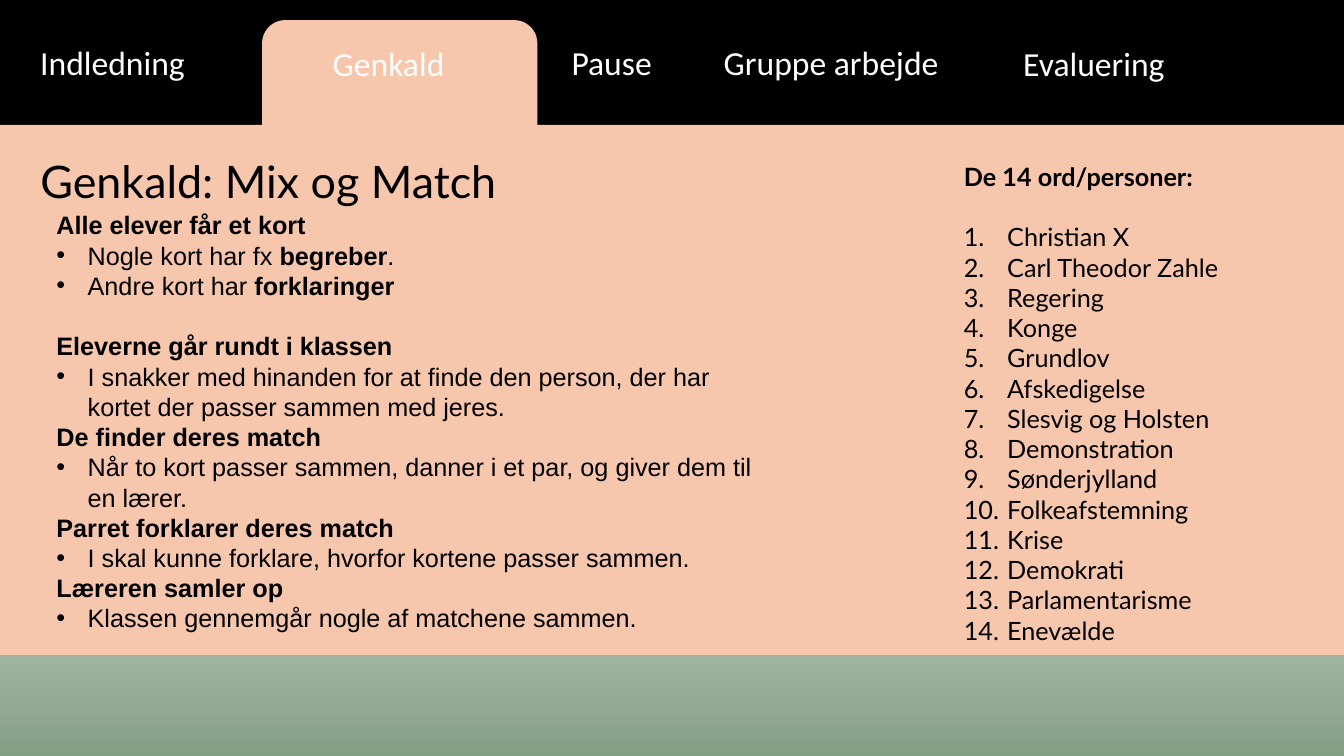
from copy import deepcopy

from lxml.etree import SubElement
from pptx import Presentation
from pptx.dml.color import RGBColor
from pptx.enum.shapes import MSO_SHAPE as Shape
from pptx.enum.text import MSO_ANCHOR as Anchor, MSO_AUTO_SIZE as AutoSize, PP_ALIGN as Align
from pptx.oxml.ns import qn
from pptx.util import Inches, Pt

COLORS = {
    "black": "000000",
    "white": "FFFFFF",
    "peach": "F6C6AD",
    "footer": ["9EB49F", "91A892", "7D9C7E"],
}
LINE = Pt(21.6)


def add_run(para, text, font, size, color="black", bold=False):
    span = para.add_run()
    span.text = text
    span.font.name = font
    span.font.size = Pt(size)
    span.font.bold = bold
    span.font.color.rgb = RGBColor.from_string(COLORS[color])


def set_marker(para, indent=0, tag="a:buNone", **attributes):
    properties = para._p.get_or_add_pPr()
    properties.set("marL", str(Inches(indent)))
    properties.set("indent", str(-Inches(indent)))
    SubElement(properties, qn(tag), attributes)
    para.alignment = Align.LEFT
    para.space_before = Pt(0)


deck = Presentation()
deck.slide_width, deck.slide_height = Inches(13.33), Inches(7.5)
page = deck.slides.add_slide(deck.slide_layouts[3])
page.background.fill.solid()
page.background.fill.fore_color.rgb = RGBColor.from_string(COLORS["black"])

# Active tab joined to the content panel
folder = page.shapes.add_group_shape()
for kind, left, top, width, height in [
    (Shape.ROUNDED_RECTANGLE, 2.6, 0.2, 2.73, 1.37),
    (Shape.RECTANGLE, -0.13, 1.24, 13.76, 6.26),
]:
    part = folder.shapes.add_shape(kind, Inches(left), Inches(top), Inches(width), Inches(height))
    part.shadow.inherit = False
    part.fill.solid()
    part.fill.fore_color.rgb = RGBColor.from_string(COLORS["peach"])
    part.line.fill.background()

# Footer band with a three-step gradient
footer = page.shapes.add_shape(Shape.RECTANGLE, Inches(-0.13), Inches(6.5), Inches(13.76), Inches(1.13))
footer.shadow.inherit = False
footer.line.fill.background()
footer.fill.gradient()
footer.fill.gradient_angle = 270
stop_list = footer.element.spPr.find(".//" + qn("a:gsLst"))
stop_list.insert(1, deepcopy(stop_list[0]))
for index, (stop, color) in enumerate(zip(footer.fill.gradient_stops, COLORS["footer"])):
    stop.position = index / 2
    stop.color.rgb = RGBColor.from_string(color)

# Tab labels
for label, left, top, width, inset in [
    ("Indledning", 0.3, 0.37, 2.15, 0.1),
    ("Genkald", 2.75, 0.38, 2.52, 0.55),
    ("Pause", 5.57, 0.37, 1.21, 0.1),
    ("Gruppe arbejde", 7.08, 0.37, 2.67, 0.1),
    ("Evaluering", 10.05, 0.38, 2.15, 0.1),
]:
    box = page.shapes.add_textbox(Inches(left), Inches(top), Inches(width), Inches(0.5))
    box.text_frame.word_wrap = True
    box.text_frame.margin_left = Inches(inset)
    add_run(box.text_frame.paragraphs[0], label, "Calibri", 24, "white")

# Title and both text columns, placed in front of the panel
title, steps, words = page.shapes.title, page.placeholders[1], page.placeholders[2]
for box, left, top, width, height in [
    (title, 0.3, 1.47, 13.03, 1.55),
    (words, 9.46, 1.55, 3.34, 4.95),
    (steps, 0.46, 2.03, 7.1, 4.34),
]:
    box.left, box.top = Inches(left), Inches(top)
    box.width, box.height = Inches(width), Inches(height)
    box.text_frame.word_wrap = True
    box.text_frame.auto_size = AutoSize.NONE
    box.text_frame.vertical_anchor = Anchor.TOP
    page.shapes.element.append(box.element)

heading = title.text_frame.paragraphs[0]
heading.alignment = Align.LEFT
add_run(heading, "Genkald: Mix og Match", "Lato", 32)

# Numbered words
para = words.text_frame.paragraphs[0]
set_marker(para)
add_run(para, "De 14 ord/personer:", "Lato", 18, bold=True)
para.space_after = LINE
for word in [
    "Christian X", "Carl Theodor Zahle", "Regering", "Konge", "Grundlov",
    "Afskedigelse", "Slesvig og Holsten", "Demonstration", "Sønderjylland",
    "Folkeafstemning", "Krise", "Demokrati", "Parlamentarisme", "Enevælde",
]:
    para = words.text_frame.add_paragraph()
    set_marker(para, 0.43, "a:buAutoNum", type="arabicPeriod")
    add_run(para, word, "Lato", 18)

# Steps: a bold heading, then bullets whose odd-numbered pieces are bold
sections = [
    ("Alle elever får et kort",
     [["Nogle kort har fx ", "begreber", "."], ["Andre kort har ", "forklaringer"]]),
    ("Eleverne går rundt i klassen",
     [["I snakker med hinanden for at finde den person, der har kortet der passer sammen med jeres."]]),
    ("De finder deres match",
     [["Når to kort passer sammen, danner i et par, og giver dem til en lærer."]]),
    ("Parret forklarer deres match",
     [["I skal kunne forklare, hvorfor kortene passer sammen."]]),
    ("Læreren samler op",
     [["Klassen gennemgår nogle af matchene sammen."]]),
]
for number, (step, bullets) in enumerate(sections):
    para = steps.text_frame.add_paragraph() if number else steps.text_frame.paragraphs[0]
    set_marker(para)
    para.line_spacing = LINE
    if number == 1:
        para.space_before = LINE
    add_run(para, step, "Arial", 18, bold=True)
    for pieces in bullets:
        para = steps.text_frame.add_paragraph()
        set_marker(para, 0.31, "a:buChar", char="•")
        para.line_spacing = LINE
        for position, piece in enumerate(pieces):
            add_run(para, piece, "Arial", 18, bold=position % 2 == 1)

deck.save("out.pptx")
